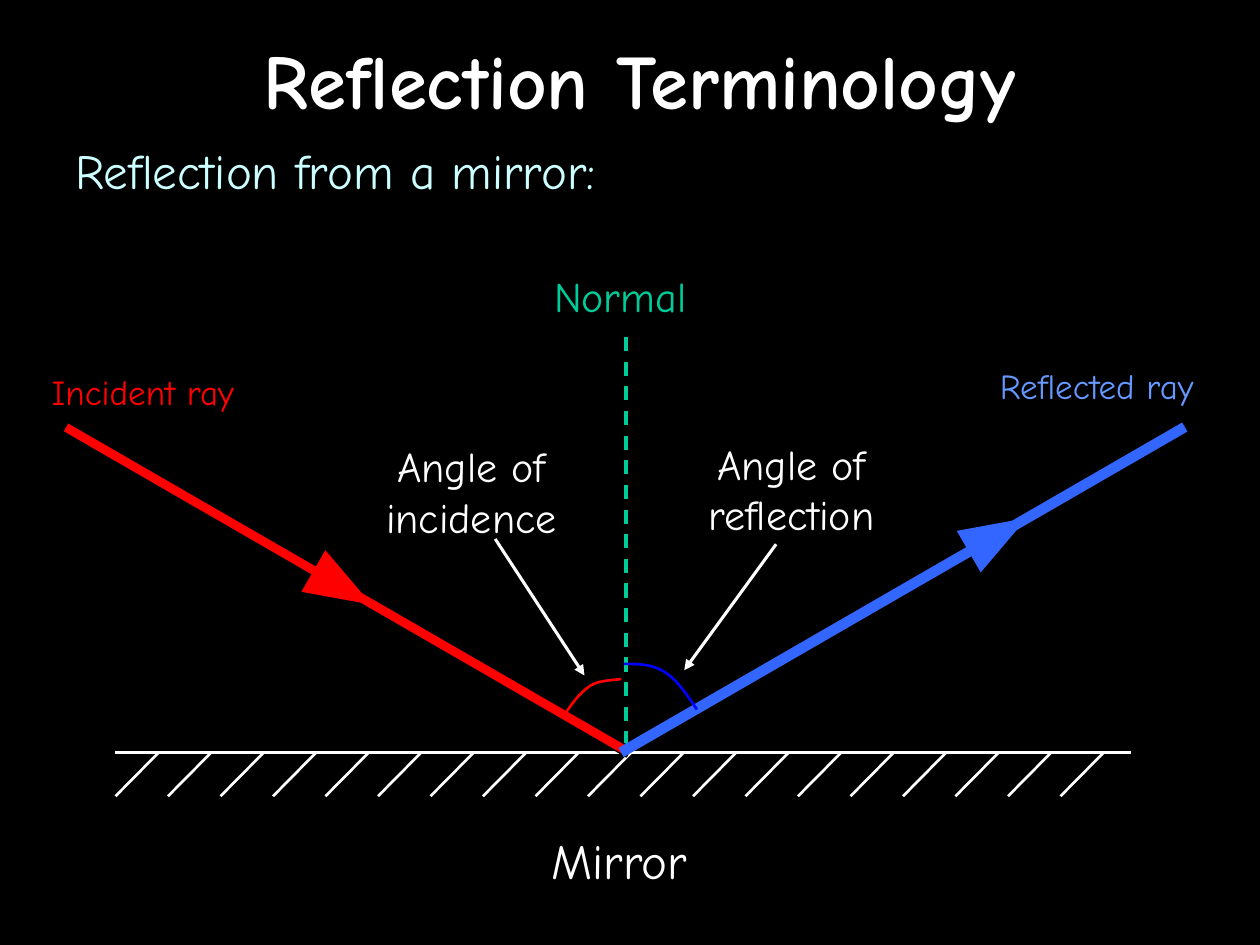
from dataclasses import dataclass

from lxml.etree import SubElement
from pptx import Presentation
from pptx.dml.color import RGBColor
from pptx.enum.dml import MSO_LINE_DASH_STYLE as Dash
from pptx.enum.shapes import MSO_CONNECTOR as Connector, MSO_SHAPE as Shape
from pptx.enum.text import MSO_ANCHOR as Anchor, PP_ALIGN as Align
from pptx.oxml.ns import qn
from pptx.slide import Slide
from pptx.util import Pt

COLORS = {
    "background": "000000",
    "white": "FFFFFF",
    "subtitle": "CCFFFF",
    "normal": "00CC99",
    "incident": "FF0000",
    "reflected": "3366FF",
    "reflected_label": "6699FF",
    "reflected_arc": "0000FF",
}


def rgb(name):
    return RGBColor.from_string(COLORS[name])


@dataclass
class Diagram:
    slide: Slide
    font: str = "Comic Neue"

    def set_text(self, frame, text, size, color, align, bold=False):
        frame.word_wrap = True
        frame.text = text
        paragraph = frame.paragraphs[0]
        paragraph.alignment = align
        font = paragraph.font
        font.name, font.size, font.bold = self.font, Pt(size), bold
        font.color.rgb = rgb(color)

    def title(self, text, left, top, width, height):
        title = self.slide.shapes.title
        title.left, title.top = Pt(left), Pt(top)
        title.width, title.height = Pt(width), Pt(height)
        title.text_frame.vertical_anchor = Anchor.MIDDLE
        self.set_text(title.text_frame, text, 44, "white", Align.CENTER, bold=True)

    def label(self, text, left, top, width, height, size, color, align=Align.CENTER):
        box = self.slide.shapes.add_textbox(Pt(left), Pt(top), Pt(width), Pt(height))
        self.set_text(box.text_frame, text, size, color, align)

    def line(self, start, end, color, weight, dash=None, arrow=False):
        line = self.slide.shapes.add_connector(
            Connector.STRAIGHT, *(Pt(value) for value in (*start, *end)))
        line.line.color.rgb = rgb(color)
        line.line.width = Pt(weight)
        if dash:
            line.line.dash_style = dash
        if arrow:
            SubElement(line.get_or_add_ln(), qn("a:tailEnd"), type="triangle")
        SubElement(line._element.spPr, qn("a:effectLst"))

    def bar(self, kind, center, width, height, angle, color, outline=None):
        x, y = center
        bar = self.slide.shapes.add_shape(
            kind, Pt(x - width / 2), Pt(y - height / 2), Pt(width), Pt(height))
        bar.rotation = angle
        bar.shadow.inherit = False
        bar.fill.solid()
        bar.fill.fore_color.rgb = rgb(color)
        if outline:
            bar.line.color.rgb = rgb(outline)
            bar.line.width = Pt(0.75)
        else:
            bar.line.fill.background()
        return bar

    def ray(self, center, head_center, angle, color, outline=None):
        self.bar(Shape.RECTANGLE, center, 372, 6, angle, color, outline)
        head = self.bar(Shape.RIGHT_ARROW, head_center, 152, 27.4, angle, color)
        head.adjustments[0], head.adjustments[1] = 0.036, 1.4

    def arc(self, curves, color, steps=12):
        """Draw joined cubic curves, each given by its four control points."""
        points = [curves[0][0]]
        for curve in curves:
            for step in range(1, steps + 1):
                t = step / steps
                weights = ((1 - t) ** 3, 3 * t * (1 - t) ** 2, 3 * t * t * (1 - t), t ** 3)
                points.append(tuple(
                    sum(w * p[axis] for w, p in zip(weights, curve)) for axis in (0, 1)))
        # The builder keeps whole local units, so points are given in lengths
        points = [(Pt(x), Pt(y)) for x, y in points]
        builder = self.slide.shapes.build_freeform(*points[0])
        builder.add_line_segments(points[1:], close=False)
        arc = builder.convert_to_shape()
        arc.shadow.inherit = False
        arc.fill.background()
        arc.line.color.rgb = rgb(color)
        arc.line.width = Pt(1.5)


def main():
    deck = Presentation()
    deck.slide_width, deck.slide_height = Pt(720), Pt(540)
    slide = deck.slides.add_slide(deck.slide_layouts[5])
    slide.background.fill.solid()
    slide.background.fill.fore_color.rgb = rgb("background")
    diagram = Diagram(slide)

    # Headings
    diagram.title(" Reflection Terminology", 28, 0, 660, 90)
    diagram.label("Reflection from a mirror:", 36, 77, 385, 62, 28, "subtitle", Align.LEFT)

    # Mirror with evenly spaced hatching
    mirror_y, mirror_left = 430, 66
    diagram.line((mirror_left, mirror_y), (646.5, mirror_y), "white", 2)
    for index in range(19):
        x = mirror_left + 30 * index
        diagram.line((x + 24.7, mirror_y), (x, mirror_y + 25), "white", 1.5)
    diagram.label("Mirror", 240.5, 471, 227, 41, 28, "white")

    # Normal
    diagram.line((357.6, 426), (357.6, 192), "normal", 2, dash=Dash.DASH)
    diagram.label("Normal", 309.6, 151, 166, 36, 24, "normal", Align.LEFT)

    # Rays
    diagram.ray((198.4, 337), (146.5, 307.5), 30, "incident", outline="background")
    diagram.ray((516, 337), (521, 334), 330, "reflected")
    diagram.label("Incident ray", 5, 208, 153.4, 31, 20, "incident")
    diagram.label("Reflected ray", 550, 204.5, 153.4, 31, 20, "reflected_label")

    # Angles
    diagram.label("Angle of incidence", 167.8, 248.4, 203, 65, 24, "white")
    diagram.label("Angle of reflection", 370.8, 247, 162.7, 65, 24, "white")
    diagram.line((283, 308), (334, 386), "white", 1.75, arrow=True)
    diagram.line((443.5, 311), (391, 383), "white", 1.75, arrow=True)
    diagram.arc([
        [(323.3, 407.5), (327.6, 401), (332, 395.3), (337.7, 391.7)],
        [(337.7, 391.7), (342.7, 388.8), (349.2, 388.8), (355, 388.1)],
    ], "incident")
    diagram.arc([
        [(398.2, 405.4), (392.4, 396.7), (386.6, 388.1), (379.4, 383.8)],
        [(379.4, 383.8), (372.2, 379.4), (364.3, 379.4), (356.4, 379.4)],
    ], "reflected_arc")

    deck.save("out.pptx")


if __name__ == "__main__":
    main()
